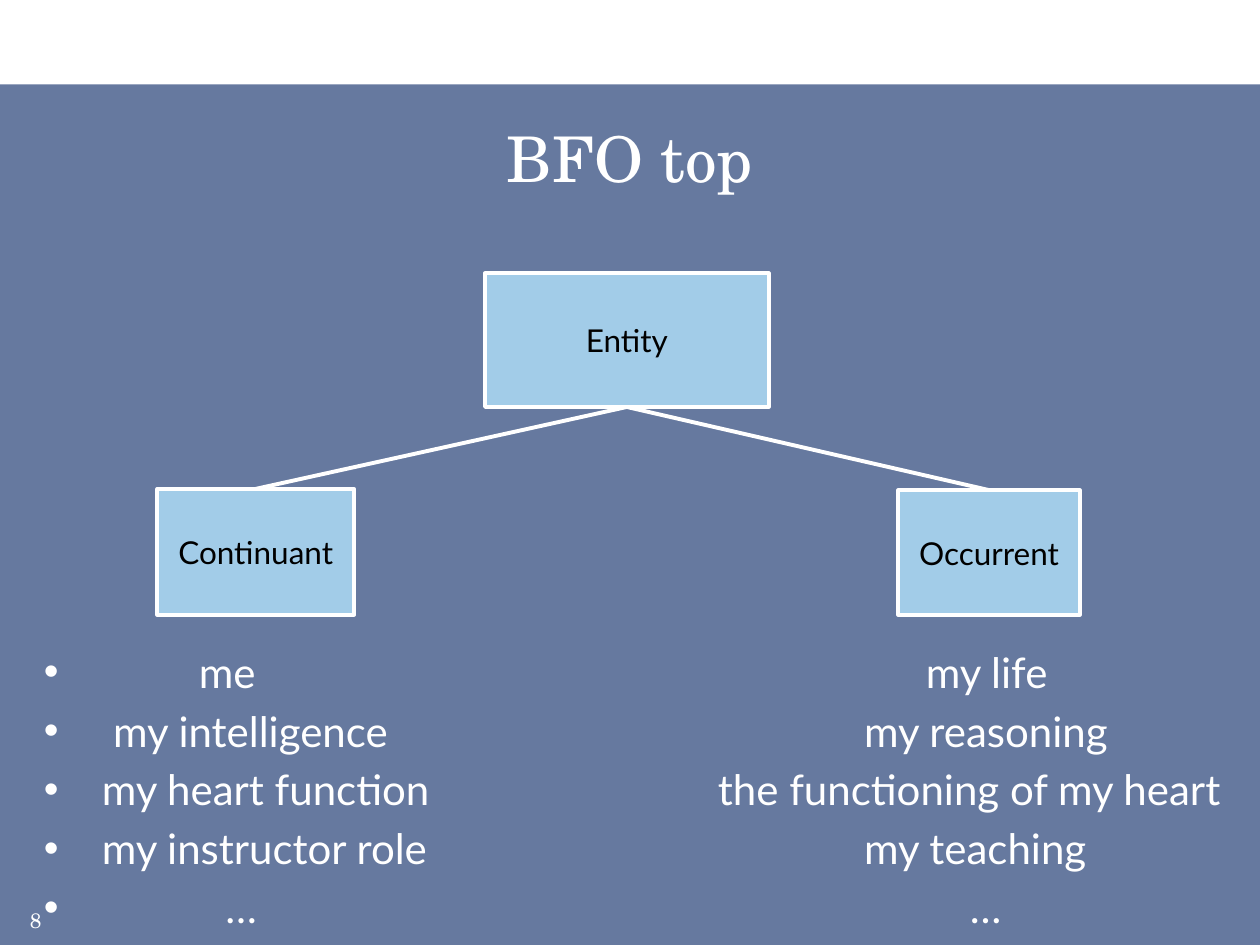
from lxml import etree
from pptx import Presentation
from pptx import util as u
from pptx.dml.color import RGBColor
from pptx.enum import shapes, text
from pptx.oxml import ns

COLORS = {"navy": "002060", "sky": "A2CCE8", "white": "FFFFFF", "black": "000000"}
SERIF, SANS = "TeX Gyre Schola", "Lato"
WIDTH, HEIGHT = 10, 7.5
OUTLINE = 2.25

# Each item: text and its indent in inches from the left of its column
CONTINUANTS = [("me", 1.23), ("my intelligence", 0.55), ("my heart function", 0.46),
               ("my instructor role", 0.46), ("…", 1.44)]
OCCURRENTS = [("my life", 1.75), ("my reasoning", 1.26),
              ("the functioning of my heart", 0.1), ("my teaching", 1.26), ("…", 2.1)]


def rgb(name):
    return RGBColor.from_string(COLORS[name])


def add_sub(parent, tag, **attributes):
    return etree.SubElement(parent, ns.qn(tag), attributes)


def write(paragraph, words, font=SANS, size=18, color="white", align=text.PP_ALIGN.LEFT):
    paragraph.alignment = align
    run = paragraph.add_run()
    run.text = words
    run.font.name, run.font.size = font, u.Pt(size)
    run.font.color.rgb = rgb(color)


def add_frame(slide, left, top, width, height, anchor=text.MSO_ANCHOR.TOP):
    box = slide.shapes.add_textbox(*map(u.Inches, (left, top, width, height)))
    frame = box.text_frame
    frame.word_wrap, frame.vertical_anchor = True, anchor
    return frame


def add_backdrop(slide, top):
    panel = slide.shapes.add_shape(shapes.MSO_SHAPE.RECTANGLE, 0, u.Inches(top),
                                   u.Inches(WIDTH), u.Inches(HEIGHT - top))
    panel.shadow.inherit = False
    panel.fill.solid()
    panel.fill.fore_color.rgb = rgb("navy")
    add_sub(panel.fill._xPr.find(".//" + ns.qn("a:srgbClr")), "a:alpha", val="60000")
    panel.line.fill.background()


def add_class_box(slide, name, left, top, width, height):
    box = slide.shapes.add_shape(shapes.MSO_SHAPE.RECTANGLE,
                                 *map(u.Inches, (left, top, width, height)))
    box.shadow.inherit = False
    box.fill.solid()
    box.fill.fore_color.rgb = rgb("sky")
    box.line.color.rgb, box.line.width = rgb("white"), u.Pt(OUTLINE)
    frame = box.text_frame
    frame.word_wrap, frame.vertical_anchor = False, text.MSO_ANCHOR.MIDDLE
    write(frame.paragraphs[0], name, color="black", align=text.PP_ALIGN.CENTER)
    return box


def add_branch(slide, parent, child):
    branch = slide.shapes.add_connector(shapes.MSO_CONNECTOR.STRAIGHT, 0, 0, 0, 0)
    branch.begin_connect(parent, 2)  # bottom middle
    branch.end_connect(child, 0)  # top middle
    branch.line.color.rgb, branch.line.width = rgb("white"), u.Pt(OUTLINE)
    add_sub(branch._element.spPr, "a:effectLst")


def add_examples(slide, examples, left, width, bulleted=False):
    frame = add_frame(slide, left, 5.08, width, 2.17)
    for row, (words, indent) in enumerate(examples):
        paragraph = frame.add_paragraph() if row else frame.paragraphs[0]
        if row:
            paragraph.space_before = u.Pt(4.8)
        properties = paragraph._p.get_or_add_pPr()
        properties.set("marL", str(u.Inches(indent)))
        if bulleted:
            properties.set("indent", str(-u.Inches(indent)))
            add_sub(add_sub(properties, "a:buClr"), "a:srgbClr", val=COLORS["white"])
            add_sub(properties, "a:buFont", typeface="Arial")
            add_sub(properties, "a:buChar", char="•")
        write(paragraph, words, size=24)


def main():
    deck = Presentation()
    deck.slide_width, deck.slide_height = u.Inches(WIDTH), u.Inches(HEIGHT)
    slide = deck.slides.add_slide(deck.slide_layouts[6])

    # Backdrop and title
    add_backdrop(slide, 0.67)
    title = add_frame(slide, 0.25, 0.83, 9.5, 0.83, text.MSO_ANCHOR.MIDDLE)
    write(title.paragraphs[0], "BFO top", font=SERIF, size=36, align=text.PP_ALIGN.CENTER)

    # Examples under the two classes
    add_examples(slide, CONTINUANTS, 0.25, 4.5, bulleted=True)
    add_examples(slide, OCCURRENTS, 5.5, 4.5)

    # Page number
    number = add_frame(slide, 0, 7.08, 0.33, 0.32, text.MSO_ANCHOR.BOTTOM)
    number.margin_left = number.margin_right = number.margin_top = number.margin_bottom = 0
    write(number.paragraphs[0], "8", font=SERIF, size=12, align=text.PP_ALIGN.RIGHT)

    # Class tree
    entity = add_class_box(slide, "Entity", 3.85, 2.17, 2.25, 1.06)
    continuant = add_class_box(slide, "Continuant", 1.25, 3.88, 1.56, 1)
    occurrent = add_class_box(slide, "Occurrent", 7.13, 3.89, 1.44, 0.99)
    for child in (continuant, occurrent):
        add_branch(slide, entity, child)

    deck.save("out.pptx")


if __name__ == "__main__":
    main()
